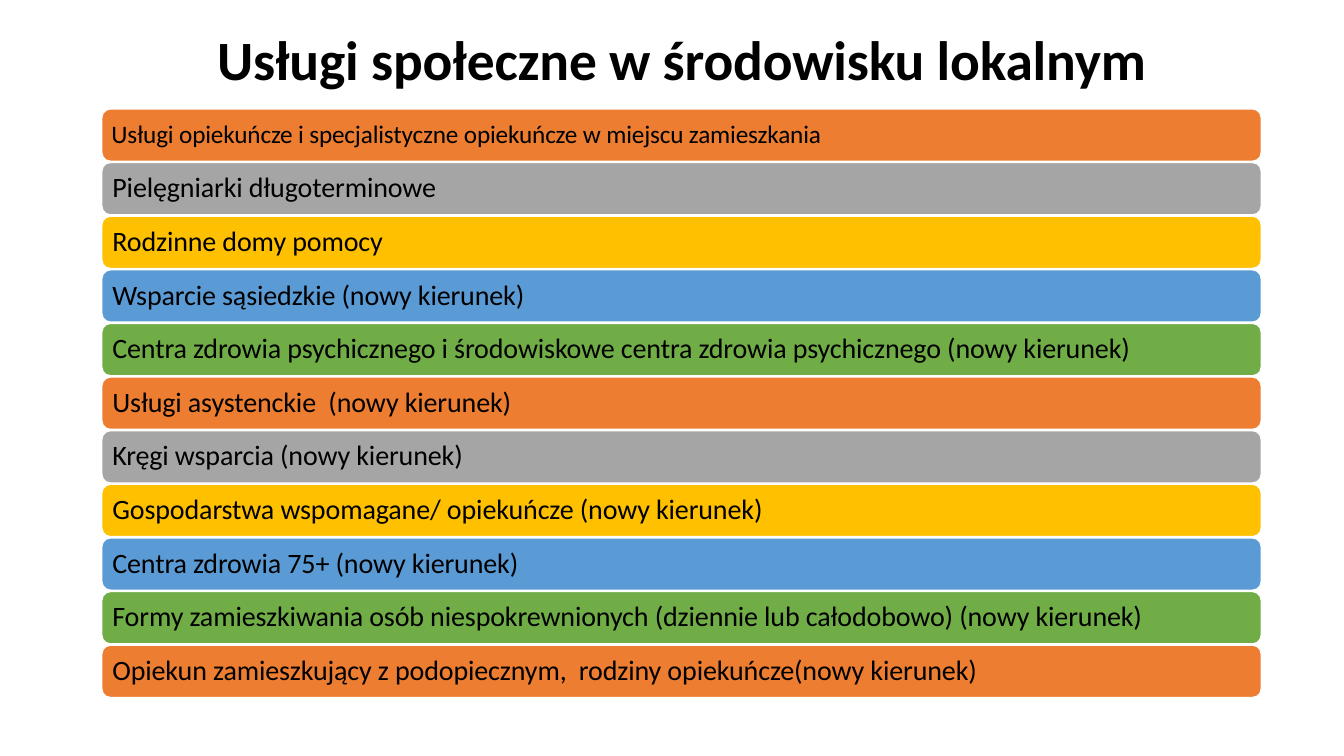
import pptx
import pptx.util
import pptx.dml.color
import pptx.enum.shapes
import pptx.enum.text
from dataclasses import dataclass

Inches = pptx.util.Inches
Pt = pptx.util.Pt
Shape = pptx.enum.shapes.MSO_SHAPE
Align = pptx.enum.text.PP_ALIGN
Anchor = pptx.enum.text.MSO_ANCHOR


@dataclass(frozen=True)
class Theme:
    font: str = "Calibri"
    ink: str = "000000"
    edge: str = "FFFFFF"
    fills: tuple = ("ED7D31", "A5A5A5", "FFC000", "5B9BD5", "70AD47")
    title: float = 39.6
    first: float = 18
    body: float = 20


def color(code):
    return pptx.dml.color.RGBColor.from_string(code)


def write(frame, text, *, font, size, ink, bold=False, align=Align.LEFT,
          inset=0.0, line=1.0, track=-10):
    frame.word_wrap = True
    frame.vertical_anchor = Anchor.MIDDLE
    frame.margin_left = frame.margin_right = Inches(inset)
    frame.margin_top = frame.margin_bottom = 0
    para = frame.paragraphs[0]
    para.alignment = align
    para.line_spacing = line
    run = para.add_run()
    run.text = text
    run.font.name = font
    run.font.size = Pt(size)
    run.font.bold = bold
    run.font.color.rgb = color(ink)
    run._r.get_or_add_rPr().set("spc", str(track))


class Deck:
    """Draws styled elements on the current slide."""

    def __init__(self, theme):
        self.theme = theme
        self.show = pptx.Presentation()
        self.show.slide_width = Inches(13.33)
        self.show.slide_height = Inches(7.5)
        self.slide = self.show.slides.add_slide(self.show.slide_layouts[6])

    def title(self, text, box):
        item = self.slide.shapes.add_textbox(*map(Inches, box))
        write(item.text_frame, text, font=self.theme.font, ink=self.theme.ink,
              size=self.theme.title, bold=True, align=Align.CENTER)

    def bar(self, text, box, fill, size, inset):
        item = self.slide.shapes.add_shape(
            Shape.ROUNDED_RECTANGLE, *map(Inches, box))
        item.shadow.inherit = False
        item.fill.solid()
        item.fill.fore_color.rgb = color(fill)
        item.line.color.rgb = color(self.theme.edge)
        item.line.width = Pt(1)
        write(item.text_frame, text, font=self.theme.font, size=size,
              ink=self.theme.ink, inset=inset, line=0.9)


SERVICES = (
    "Usługi opiekuńcze i specjalistyczne opiekuńcze w miejscu zamieszkania",
    "Pielęgniarki długoterminowe",
    "Rodzinne domy pomocy",
    "Wsparcie sąsiedzkie (nowy kierunek)",
    "Centra zdrowia psychicznego i środowiskowe centra zdrowia psychicznego (nowy kierunek)",
    "Usługi asystenckie  (nowy kierunek)",
    "Kręgi wsparcia (nowy kierunek)",
    "Gospodarstwa wspomagane/ opiekuńcze (nowy kierunek)",
    "Centra zdrowia 75+ (nowy kierunek)",
    "Formy zamieszkiwania osób niespokrewnionych (dziennie lub całodobowo) (nowy kierunek)",
    "Opiekun zamieszkujący z podopiecznym,  rodziny opiekuńcze(nowy kierunek)",
)
LEFT, WIDTH = 1.01, 11.5
TOP, LAST, HEIGHT = 1.08, 6.4, 0.52


def main():
    theme = Theme()
    deck = Deck(theme)
    deck.title("Usługi społeczne w środowisku lokalnym",
               (LEFT, 0.34, WIDTH, 0.48))
    step = (LAST - TOP) / (len(SERVICES) - 1)
    for row, text in enumerate(SERVICES):
        size, inset = (theme.body, 0.08) if row else (theme.first, 0.07)
        deck.bar(text, (LEFT, TOP + row * step, WIDTH, HEIGHT),
                 theme.fills[row % len(theme.fills)], size, inset)
    deck.show.save("out.pptx")


if __name__ == "__main__":
    main()
